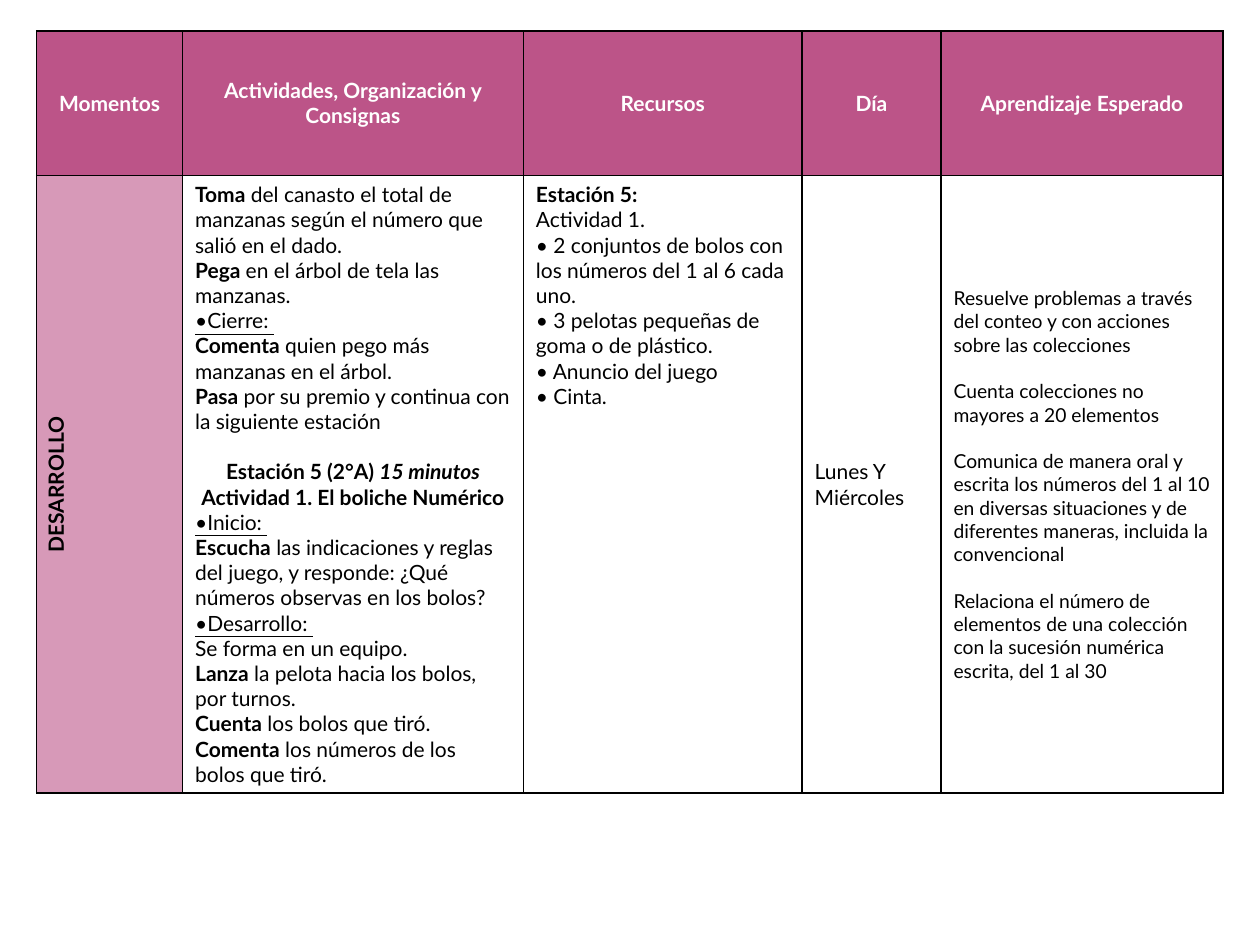
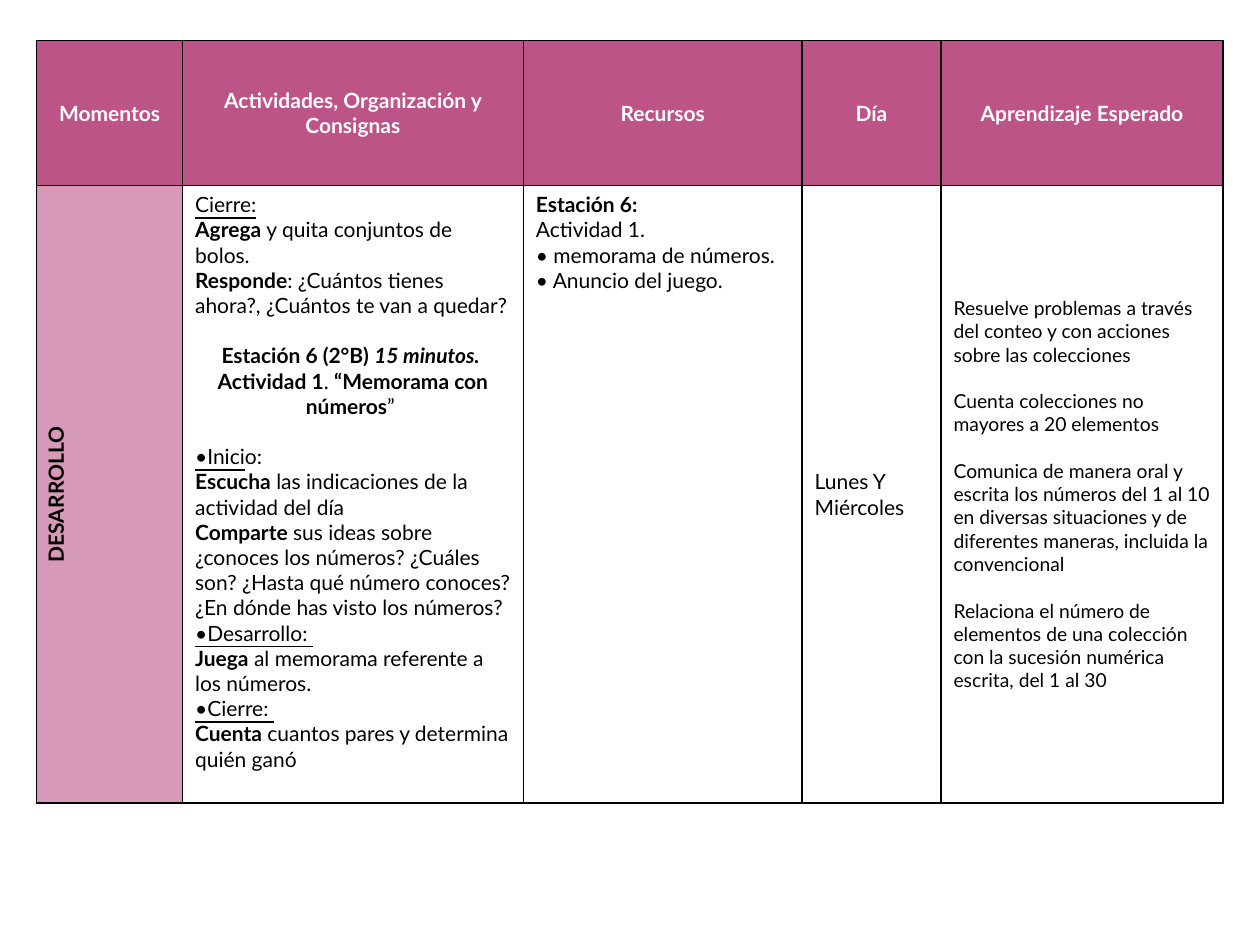
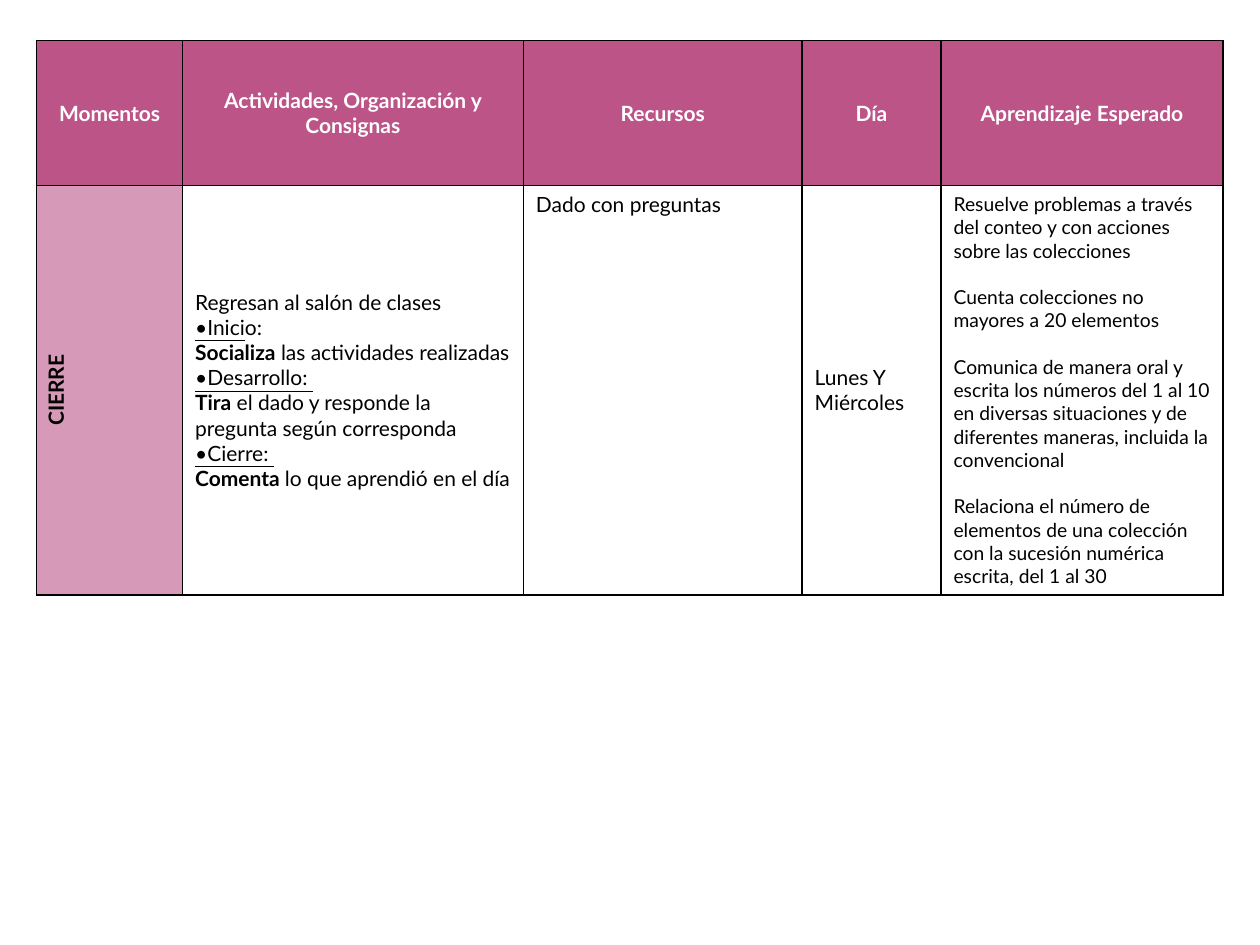
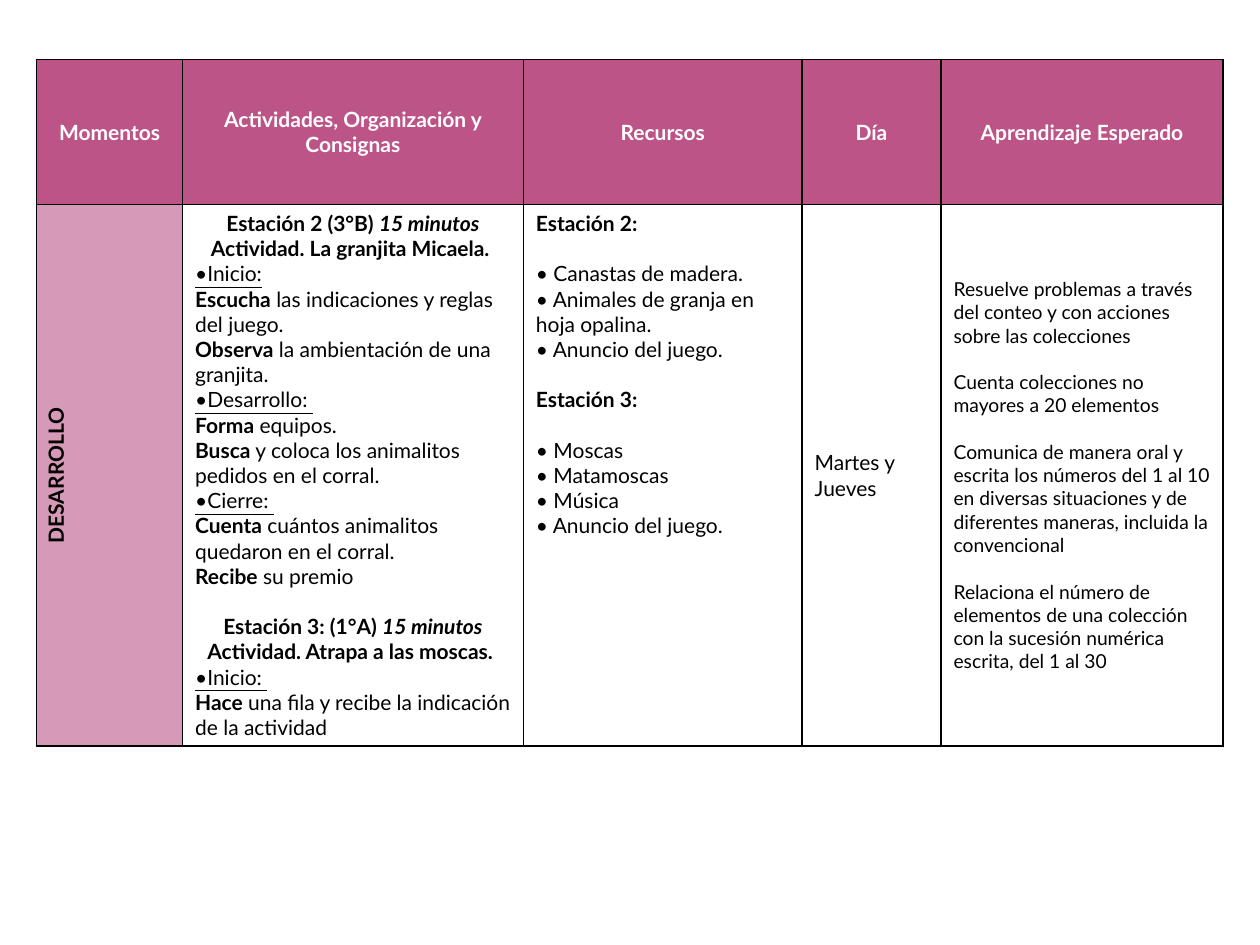
from typing import NamedTuple

from lxml.etree import SubElement
from pptx import Presentation
from pptx.dml.color import RGBColor
from pptx.enum.text import MSO_ANCHOR as Anchor, PP_ALIGN as Align
from pptx.oxml.ns import qn
from pptx.util import Cm, Pt

# Shared look
FONT = "Lato"
HEADER_FILL, MOMENT_FILL = "BC5488", "D799B8"
WHITE, BLACK = "FFFFFF", "000000"
TEXT_SIZE, GOAL_SIZE = 12, 11
LINE_HEIGHT = 1.2
TABLE_LEFT = Cm(0.74)
COLUMN_WIDTHS = [Cm(width) for width in (2.94, 6.87, 5.62, 2.8, 5.69)]
HEADER_HEIGHT = Cm(2.92)
HEADERS = ["Momentos", "Actividades, Organización y Consignas", "Recursos", "Día",
           "Aprendizaje Esperado"]


class Span(NamedTuple):
    text: str
    bold: bool = False
    italic: bool = False
    underline: bool = False


class Para(NamedTuple):
    spans: list[Span]
    align: Align = Align.LEFT
    gap: bool = False  # one free line above


class CellStyle(NamedTuple):
    size: int = TEXT_SIZE
    color: str = BLACK
    fill: str | None = None
    anchor: Anchor = Anchor.MIDDLE
    vertical: bool = False


class Lesson(NamedTuple):
    top: Cm
    body_height: Cm
    moment: str
    activities: list[Para]
    resources: list[Para]
    days: str
    activity_anchor: Anchor = Anchor.MIDDLE


# Kinds of paragraph
def line(text: str, gap: bool = False) -> Para:
    return Para([Span(text)], gap=gap)


def strong(text: str, gap: bool = False) -> Para:
    return Para([Span(text, bold=True)], gap=gap)


def step(verb: str, rest: str) -> Para:
    return Para([Span(verb, bold=True), Span(rest)])


def label(text: str) -> Para:
    return Para([Span(text, underline=True)])


def centered(text: str) -> Para:
    return Para([Span(text, bold=True)], Align.CENTER)


def station(name: str, time: str, gap: bool = False) -> Para:
    return Para([Span(name, bold=True), Span(time, bold=True, italic=True)], Align.CENTER, gap)


HEADER_STYLE = CellStyle(color=WHITE, fill=HEADER_FILL)
MOMENT_STYLE = CellStyle(fill=MOMENT_FILL, vertical=True)
START = Para([Span("•Inici", underline=True), Span("o:")])
GOALS = [
    line("Resuelve problemas a través del conteo y con acciones sobre las colecciones"),
    line("Cuenta colecciones no mayores a 20 elementos", gap=True),
    line("Comunica de manera oral y escrita los números del 1 al 10 en diversas situaciones "
         "y de diferentes maneras, incluida la convencional", gap=True),
    line("Relaciona el número de elementos de una colección con la sucesión numérica escrita, "
         "del 1 al 30", gap=True),
]

LESSONS = [
    Lesson(
        Cm(0.62), Cm(12.45), "DESARROLLO",
        [
            step("Toma", " del canasto el total de manzanas según el número que salió en el dado."),
            step("Pega ", "en el árbol de tela las manzanas."),
            label("•Cierre: "),
            step("Comenta", " quien pego más manzanas en el árbol."),
            step("Pasa", " por su premio y continua con la siguiente estación"),
            station("Estación 5 (2°A) ", "15 minutos", gap=True),
            centered("Actividad 1. El boliche Numérico"),
            label("•Inicio: "),
            step("Escucha", " las indicaciones y reglas del juego, y responde: "
                            "¿Qué números observas en los bolos?"),
            label("•Desarrollo: "),
            line("Se forma en un equipo."),
            step("Lanza", " la pelota hacia los bolos, por turnos."),
            Para([Span("Cuenta", bold=True), Span(" los bolos que tiró. "),
                  Span("Comenta", bold=True), Span(" los números de los bolos que tiró.")]),
        ],
        [
            strong("Estación 5:"),
            line("Actividad 1."),
            line("• 2 conjuntos de bolos con los números del 1 al 6 cada uno."),
            line("• 3 pelotas pequeñas de goma o de plástico."),
            line("• Anuncio del juego"),
            line("• Cinta."),
        ],
        "Lunes Y Miércoles"),
    Lesson(
        Cm(0.82), Cm(12.45), "DESARROLLO",
        [
            label("Cierre:"),
            step("Agrega ", "y quita conjuntos de bolos."),
            step("Responde", ": ¿Cuántos tienes ahora?, ¿Cuántos te van a quedar?"),
            station("Estación 6 (2°B) ", "15 minutos. ", gap=True),
            Para([Span("Actividad 1", bold=True), Span(". "),
                  Span("“Memorama con números", bold=True), Span("” ")], Align.CENTER),
            START._replace(gap=True),
            step("Escucha", " las indicaciones de la actividad del día"),
            step("Comparte", " sus ideas sobre ¿conoces los números? ¿Cuáles son? "
                             "¿Hasta qué número conoces? ¿En dónde has visto los números?"),
            label("•Desarrollo: "),
            step("Juega", " al memorama referente a los números."),
            label("•Cierre: "),
            step("Cuenta", " cuantos pares y determina quién ganó"),
        ],
        [
            strong("Estación 6:"),
            line("Actividad 1."),
            line("• memorama de números."),
            line("• Anuncio del juego."),
        ],
        "Lunes Y Miércoles", Anchor.TOP),
    Lesson(
        Cm(0.82), Cm(8.25), "CIERRE",
        [
            line("Regresan al salón de clases"),
            START,
            step("Socializa", " las actividades realizadas"),
            label("•Desarrollo: "),
            step("Tira", " el dado y responde la pregunta según corresponda"),
            label("•Cierre: "),
            step("Comenta ", "lo que aprendió en el día"),
        ],
        [line("Dado con preguntas")],
        "Lunes Y Miércoles"),
    Lesson(
        Cm(1.2), Cm(10.92), "DESARROLLO",
        [
            station("Estación 2 (3°B) ", "15 minutos"),
            centered("Actividad. La granjita Micaela. "),
            label("•Inicio:"),
            step("Escucha", " las indicaciones y reglas del juego."),
            step("Observa", " la ambientación de una granjita."),
            label("•Desarrollo: "),
            step("Forma", " equipos."),
            step("Busca", " y coloca los animalitos pedidos en el corral."),
            label("•Cierre: "),
            step("Cuenta", " cuántos animalitos quedaron en el corral."),
            step("Recibe", " su premio"),
            station("Estación 3: (1°A) ", "15 minutos", gap=True),
            centered("Actividad. Atrapa a las moscas. "),
            label("•Inicio: "),
            step("Hace", " una fila y recibe la indicación de la actividad"),
        ],
        [
            strong("Estación 2:"),
            line("• Canastas de madera.", gap=True),
            line("• Animales de granja en hoja opalina."),
            line("• Anuncio del juego."),
            strong("Estación 3:", gap=True),
            line("• Moscas", gap=True),
            line("• Matamoscas"),
            line("• Música"),
            line("• Anuncio del juego."),
        ],
        "Martes y Jueves"),
]


def rgb(color: str) -> RGBColor:
    return RGBColor.from_string(color)


def add_borders(cell) -> None:
    properties = cell._tc.get_or_add_tcPr()
    for side in ("a:lnL", "a:lnR", "a:lnT", "a:lnB"):
        border = SubElement(properties, qn(side), w=str(Pt(1)))
        SubElement(SubElement(border, qn("a:solidFill")), qn("a:srgbClr"), val=BLACK)


def fill_cell(cell, paras: list[Para], style: CellStyle) -> None:
    add_borders(cell)
    if style.fill:
        cell.fill.solid()
        cell.fill.fore_color.rgb = rgb(style.fill)
    else:
        cell.fill.background()
    cell.vertical_anchor = style.anchor
    if style.vertical:
        cell._tc.get_or_add_tcPr().set("vert", "vert270")

    frame = cell.text_frame
    for index, content in enumerate(paras):
        para = frame.add_paragraph() if index else frame.paragraphs[0]
        para.alignment = content.align
        if content.gap:
            para.space_before = Pt(style.size * LINE_HEIGHT)
        for span in content.spans:
            run = para.add_run()
            run.text = span.text
            font = run.font
            font.name, font.size = FONT, Pt(style.size)
            font.color.rgb = rgb(style.color)
            font.bold, font.italic, font.underline = span.bold, span.italic, span.underline


def add_lesson(deck, lesson: Lesson) -> None:
    page = deck.slides.add_slide(deck.slide_layouts[6])
    table = page.shapes.add_table(2, len(HEADERS), TABLE_LEFT, lesson.top, sum(COLUMN_WIDTHS),
                                  HEADER_HEIGHT + lesson.body_height).table
    table.horz_banding = False
    for column, width in zip(table.columns, COLUMN_WIDTHS):
        column.width = width
    table.rows[0].height, table.rows[1].height = HEADER_HEIGHT, lesson.body_height

    # Header row
    for index, header in enumerate(HEADERS):
        fill_cell(table.cell(0, index), [centered(header)], HEADER_STYLE)

    # Lesson row
    body = [
        ([centered(lesson.moment)], MOMENT_STYLE),
        (lesson.activities, CellStyle(anchor=lesson.activity_anchor)),
        (lesson.resources, CellStyle(anchor=Anchor.TOP)),
        ([line(lesson.days)], CellStyle()),
        (GOALS, CellStyle(size=GOAL_SIZE)),
    ]
    for index, (paras, style) in enumerate(body):
        fill_cell(table.cell(1, index), paras, style)


def main() -> None:
    deck = Presentation()
    deck.slide_width, deck.slide_height = Cm(25.4), Cm(19.05)
    for lesson in LESSONS:
        add_lesson(deck, lesson)
    deck.save("out.pptx")


if __name__ == "__main__":
    main()
